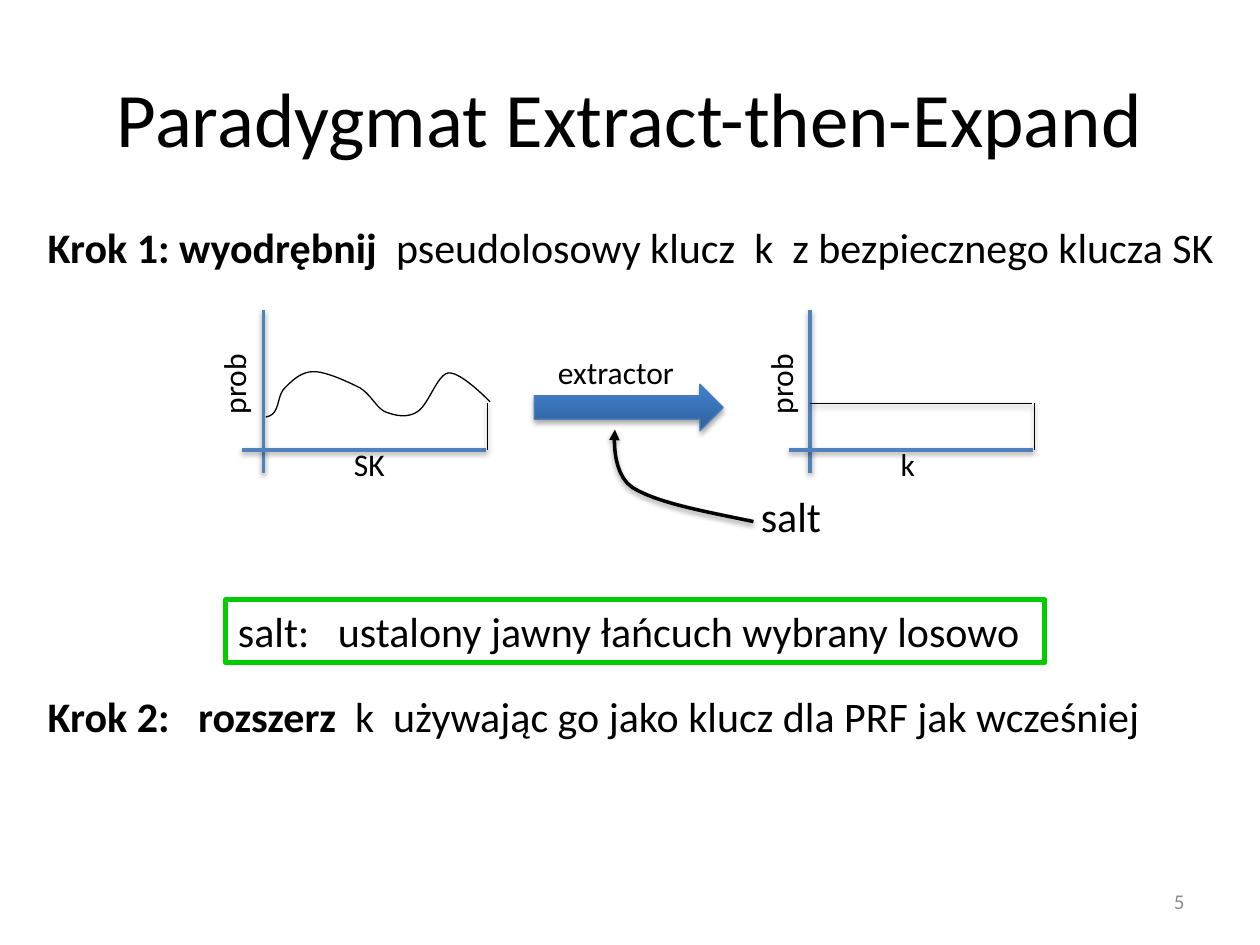
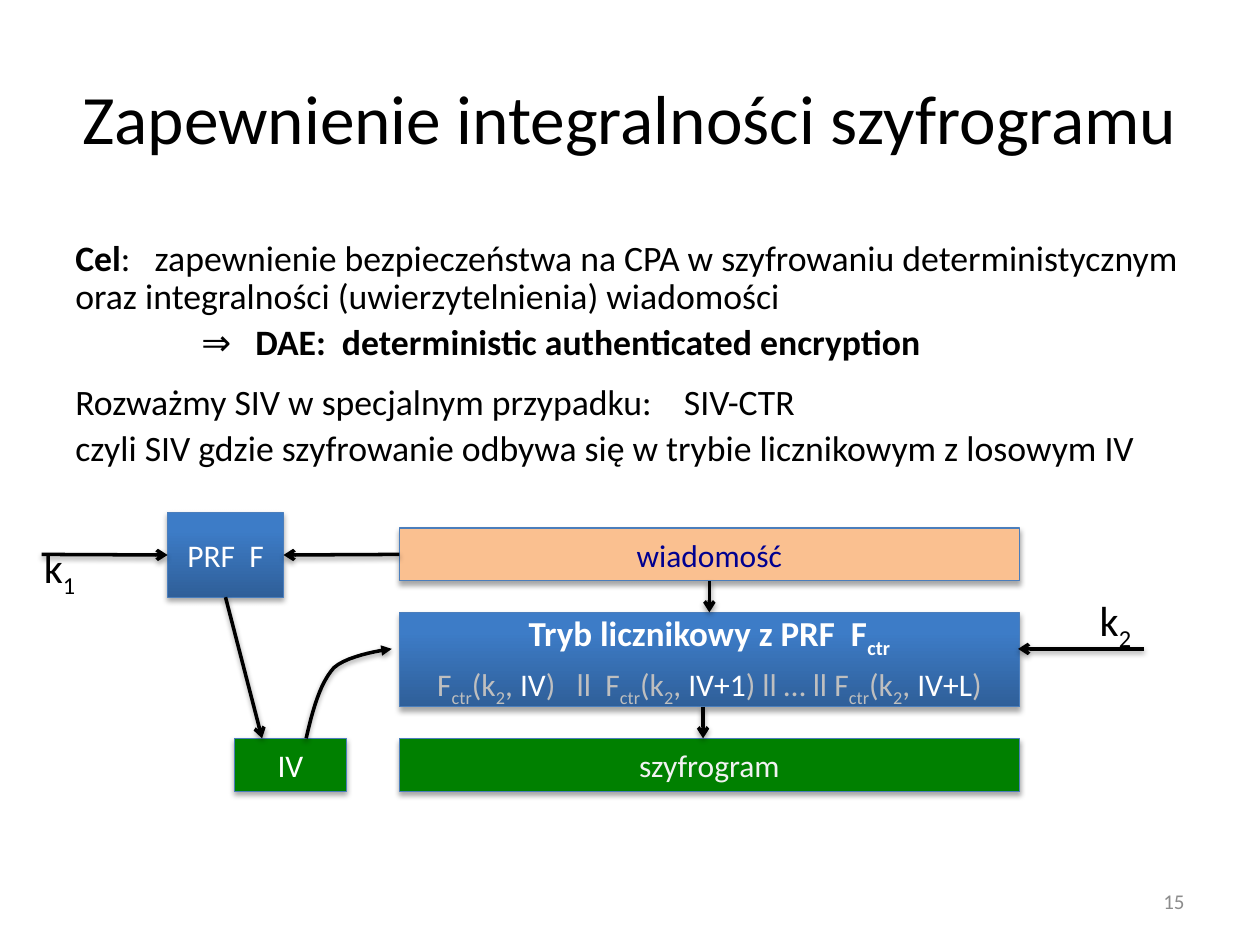
from lxml.etree import SubElement
from pptx import Presentation
from pptx.dml.color import RGBColor
from pptx.enum.shapes import MSO_CONNECTOR, MSO_SHAPE
from pptx.enum.text import MSO_ANCHOR, PP_ALIGN
from pptx.oxml.ns import qn
from pptx.util import Inches, Pt

FONT = "Calibri"
BLACK = RGBColor(0x00, 0x00, 0x00)
WHITE = RGBColor(0xFF, 0xFF, 0xFF)
OFF_WHITE = RGBColor(0xF2, 0xF2, 0xF2)
SILVER = RGBColor(0xBF, 0xBF, 0xBF)
NUMBER_GRAY = RGBColor(0x8C, 0x8C, 0x8C)
AXIS_BLUE = RGBColor(0x4F, 0x81, 0xBD)
OUTLINE_BLUE = RGBColor(0x4B, 0x7E, 0xBC)
DARK_BLUE = RGBColor(0x2F, 0x5F, 0x99)
LIGHT_BLUE = RGBColor(0x3D, 0x7C, 0xC7)
NAVY = RGBColor(0x00, 0x00, 0x90)
PEACH = RGBColor(0xFA, 0xC0, 0x90)
GREEN = RGBColor(0x00, 0x80, 0x00)
BRIGHT_GREEN = RGBColor(0x00, 0xCC, 0x00)
TOP, LEFT, BOTTOM, RIGHT = range(4)


def write(frame, paragraphs, size=18, color=BLACK, bold=False, align=PP_ALIGN.LEFT,
          anchor=MSO_ANCHOR.TOP, wrap=True, spacing=(), line_spacing=None):
    """Fill a text frame; a paragraph is a string or a list of strings and (text, format) spans."""
    frame.word_wrap = wrap
    frame.vertical_anchor = anchor
    if isinstance(paragraphs, str):
        paragraphs = [paragraphs]
    for index, spans in enumerate(paragraphs):
        para = frame.paragraphs[0] if index == 0 else frame.add_paragraph()
        para.alignment = align
        para.line_spacing = line_spacing
        if spacing:
            para.space_before = Pt(spacing[index])
        for span in [spans] if isinstance(spans, str) else spans:
            text, look = (span, {}) if isinstance(span, str) else span
            run = para.add_run()
            run.text = text
            run.font.name = FONT
            run.font.size = Pt(look.get("size", size))
            run.font.bold = look.get("bold", bold)
            run.font.color.rgb = look.get("color", color)
            if look.get("sub"):
                run.font._element.set("baseline", "-25000")


def subscript(text, **look):
    """Return a span set below the baseline."""
    return text, dict(look, sub=True)


def add_text(page, place, paragraphs, rotation=0, **look):
    """Add a text box at (left, top, width, height)."""
    box = page.shapes.add_textbox(*map(Inches, place))
    box.rotation = rotation
    write(box.text_frame, paragraphs, **look)


def add_shadow(shape, distance=20000, opacity=38000):
    """Give a shape a soft shadow that falls straight down."""
    properties = shape._element.spPr
    effects = properties.find(qn("a:effectLst"))
    if effects is None:
        effects = SubElement(properties, qn("a:effectLst"))
    shadow = SubElement(effects, qn("a:outerShdw"), blurRad="40000", dist=str(distance),
                        dir="5400000", rotWithShape="0")
    tint = SubElement(shadow, qn("a:srgbClr"), val="000000")
    SubElement(tint, qn("a:alpha"), val=str(opacity))


def style_line(shape, color, width, tail=None):
    """Set line colour, width and the arrowhead at its end."""
    shape.line.color.rgb = color
    shape.line.width = Pt(width)
    if tail:
        SubElement(shape._element.spPr.find(qn("a:ln")), qn("a:tailEnd"), type=tail)


def add_line(page, start, end, color=BLACK, width=2, tail=None, source=None, target=None):
    """Add a straight line, joined to (shape, side) pairs where given."""
    line = page.shapes.add_connector(MSO_CONNECTOR.STRAIGHT, *map(Inches, (*start, *end)))
    if source:
        line.begin_connect(*source)
    if target:
        line.end_connect(*target)
    style_line(line, color, width, tail)
    add_shadow(line)


def add_curve(page, start, bends, width=2, tail=None, shadow=True, steps=12):
    """Draw an open curve through cubic bends (control, control, end)."""
    points = []
    here = start
    for first, second, end in bends:
        for step in range(1, steps + 1):
            t = step / steps
            points.append(tuple(
                Inches((1 - t) ** 3 * a + 3 * (1 - t) ** 2 * t * b + 3 * (1 - t) * t ** 2 * c + t ** 3 * d)
                for a, b, c, d in zip(here, first, second, end)))
        here = end
    builder = page.shapes.build_freeform(*map(Inches, start))
    builder.add_line_segments(points, close=False)
    curve = builder.convert_to_shape()
    curve.fill.background()
    curve.shadow.inherit = False
    style_line(curve, BLACK, width, tail)
    if shadow:
        add_shadow(curve)


def add_block(page, place, paragraphs="", fill=None, kind=MSO_SHAPE.RECTANGLE, color=WHITE, **look):
    """Add a shadowed block with centred text, in the blue gradient unless a fill is given."""
    block = page.shapes.add_shape(kind, *map(Inches, place))
    if fill:
        block.fill.solid()
        block.fill.fore_color.rgb = fill
    else:
        block.fill.gradient()
        block.fill.gradient_angle = 90
        for stop, position, shade in zip(block.fill.gradient_stops, (0, 0.8), (DARK_BLUE, LIGHT_BLUE)):
            stop.position = position
            stop.color.rgb = shade
    style_line(block, OUTLINE_BLUE, 0.75)
    block.shadow.inherit = False
    add_shadow(block, 23000, 35000)
    if paragraphs:
        write(block.text_frame, paragraphs, color=color, align=PP_ALIGN.CENTER,
              anchor=MSO_ANCHOR.MIDDLE, **look)
    return block


def add_page(deck, title, number, title_size):
    """Add a blank page with its title and page number."""
    page = deck.slides.add_slide(deck.slide_layouts[6])
    add_text(page, (0.5, 0.3, 9, 1.25), title, size=title_size,
             align=PP_ALIGN.CENTER, anchor=MSO_ANCHOR.MIDDLE)
    add_text(page, (7.17, 6.95, 2.33, 0.4), number, size=12, color=NUMBER_GRAY,
             align=PP_ALIGN.RIGHT, anchor=MSO_ANCHOR.MIDDLE)
    return page


def add_distribution(page, left, label, label_width):
    """Draw the axes, labels and right edge of a probability plot."""
    add_line(page, (left + 0.17, 2.46), (left + 0.17, 3.75), AXIS_BLUE)
    add_line(page, (left, 3.57), (left + 1.94, 3.57), AXIS_BLUE)
    add_line(page, (left + 1.95, 3.2), (left + 1.95, 3.57), width=0.75)
    add_text(page, (left - 0.43, 2.79, 0.76, 0.43), "prob", rotation=270, wrap=False)
    add_text(page, (left + 0.79, 3.48, label_width, 0.45), label, wrap=False)


def build_extract_page(deck):
    """Build the page on extracting and expanding a key."""
    page = add_page(deck, "Paradygmat Extract-then-Expand", "5", 44)
    strong = {"bold": True}
    add_text(page, (0.28, 1.71, 9.53, 4.95), [
        [("Krok 1: wyodrębnij  ", strong), "pseudolosowy klucz  k  z bezpiecznego klucza SK"],
        [("Krok 2:   rozszerz  ", strong), "k  używając go jako klucz dla PRF jak wcześniej"],
    ], size=24, spacing=(4.8, 239))

    add_distribution(page, 1.92, "SK", 0.48)
    add_curve(page, (2.11, 3.31), [
        ((2.23, 3.29), (2.19, 3.15), (2.26, 3.08)),
        ((2.32, 3.02), (2.39, 2.95), (2.49, 2.95)),
        ((2.59, 2.95), (2.76, 3.03), (2.86, 3.08)),
        ((2.95, 3.14), (2.99, 3.24), (3.06, 3.27)),
        ((3.14, 3.3), (3.23, 3.32), (3.31, 3.27)),
        ((3.4, 3.22), (3.47, 2.97), (3.56, 2.96)),
        ((3.66, 2.95), (3.89, 3.19), (3.89, 3.19)),
    ], width=0.75, shadow=False)
    add_distribution(page, 6.26, "k", 0.34)
    add_line(page, (8.19, 3.2), (6.43, 3.2), width=0.75)

    add_block(page, (4.24, 3.05, 1.5, 0.37), kind=MSO_SHAPE.RIGHT_ARROW)
    add_text(page, (4.33, 2.75, 1.21, 0.41), "extractor")
    add_curve(page, (5.98, 4.14), [
        ((5.59, 4.06), (5.21, 3.99), (5.02, 3.87)),
        ((4.84, 3.75), (4.88, 3.41), (4.88, 3.41)),
    ], tail="triangle")
    add_text(page, (5.94, 3.84, 0.73, 0.56), "salt", size=24, wrap=False)

    note = page.shapes.add_shape(MSO_SHAPE.RECTANGLE, *map(Inches, (1.79, 4.76, 6.5, 0.5)))
    note.fill.background()
    note.shadow.inherit = False
    style_line(note, BRIGHT_GREEN, 3)
    write(note.text_frame, "salt:   ustalony jawny łańcuch wybrany losowo", size=24)


def counter_formula():
    """Return the spans of the counter mode key stream."""
    plain = {"color": SILVER}
    spans = []
    for lead, counter in (("F", "IV"), (")   ll  F", "IV+1"), (") ll … ll F", "IV+L")):
        spans += [(lead, plain), subscript("ctr", **plain), ("(k", plain),
                  subscript("2", **plain), (", ", plain), counter]
    return spans + [(")", plain)]


def build_integrity_page(deck):
    """Build the page on ciphertext integrity with SIV-CTR."""
    page = add_page(deck, "Zapewnienie integralności szyfrogramu", "15", 39.6)
    strong = {"bold": True}
    add_text(page, (0.5, 1.86, 9, 2.17), [
        [("Cel", strong), ":   zapewnienie bezpieczeństwa na CPA w szyfrowaniu deterministycznym "
                          "oraz integralności (uwierzytelnienia) wiadomości"],
        ["\t\t⇒   ", ("DAE:  deterministic authenticated encryption", strong)],
        "Rozważmy SIV w specjalnym przypadku:    SIV-CTR",
        "czyli SIV gdzie szyfrowanie odbywa się w trybie licznikowym z losowym IV",
    ], size=20.4, spacing=(4.1, 4.1, 12.2, 4.1), line_spacing=0.9)

    left, width, height = 3.17, 4.92, 0.42
    message = add_block(page, (left, 4.19, width, height), "wiadomość", PEACH, color=NAVY)
    prf = add_block(page, (1.33, 4.07, 0.92, 0.67), "PRF  F")
    heading = {"size": 20, "bold": True}
    mode = add_block(page, (left, 4.86, width, 0.75), [
        [("Tryb licznikowy z PRF  F", heading), subscript("ctr", **heading)],
        counter_formula(),
    ], spacing=(0, 3))
    add_block(page, (1.86, 5.86, 0.89, height), "IV", GREEN)
    add_block(page, (left, 5.86, width, height), "szyfrogram", GREEN, color=OFF_WHITE)

    for start, end, source, target in (
        ((0.33, 4.4), (1.33, 4.4), None, (prf, LEFT)),
        ((3.17, 4.4), (2.25, 4.4), (message, LEFT), (prf, RIGHT)),
        ((1.79, 4.74), (2.08, 5.86), (prf, BOTTOM), None),
        ((5.63, 4.61), (5.63, 4.86), (message, BOTTOM), (mode, TOP)),
        ((5.58, 5.61), (5.58, 5.86), None, None),
        ((9.08, 5.15), (8.08, 5.15), None, None),
    ):
        add_line(page, start, end, tail="arrow", source=source, target=target)
    add_curve(page, (2.43, 5.86), [
        ((2.48, 5.64), (2.54, 5.42), (2.65, 5.3)),
        ((2.77, 5.19), (3.11, 5.15), (3.11, 5.15)),
    ], tail="triangle")
    for key_left, key_top, index in ((0.25, 4.25, "1"), (8.63, 4.67, "2")):
        add_text(page, (key_left, key_top, 0.47, 0.5), [["k", subscript(index)]], size=24, wrap=False)


def main():
    """Build and save the deck."""
    deck = Presentation()
    deck.slide_width = Inches(10)
    deck.slide_height = Inches(7.5)
    build_extract_page(deck)
    build_integrity_page(deck)
    deck.save("out.pptx")


if __name__ == "__main__":
    main()
